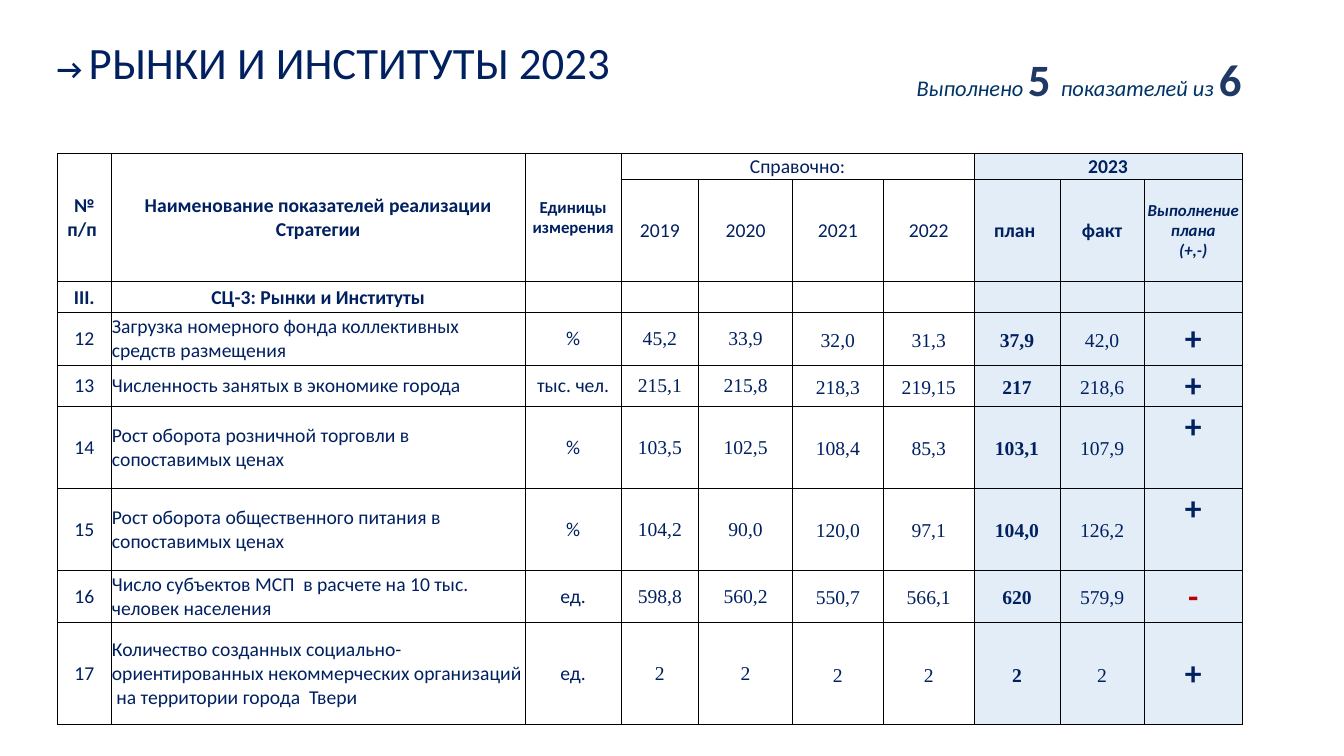
from lxml import etree
from pptx import Presentation
from pptx.dml.color import RGBColor
from pptx.enum.text import MSO_ANCHOR, PP_ALIGN
from pptx.oxml.ns import qn
from pptx.util import Cm, Pt

LEFT, CENTER, RIGHT = PP_ALIGN.LEFT, PP_ALIGN.CENTER, PP_ALIGN.RIGHT
TOP, MIDDLE = MSO_ANCHOR.TOP, MSO_ANCHOR.MIDDLE
NAVY, TEAL, INDIGO, RED = "002060", "003366", "203864", "C00000"
WHITE, PALE, BLACK = "FFFFFF", "DEEBF7", "000000"
SERIF = "Times New Roman"

COLUMNS = [1.35, 10.44, 2.41, 1.96, 2.36, 2.29, 2.29, 2.16, 2.13, 2.46]
ROWS = [0.66, 2.57, 0.77, 1.32, 1.04, 2.07, 2.06, 1.32, 2.57]
FIRST_SPACED, PLAN, FACT, RESULT = 5, 7, 8, 9
YEARS = ["2019", "2020", "2021", "2022"]
INDICATORS = [
    ["12", "Загрузка номерного фонда коллективных средств размещения", "%",
     "45,2", "33,9", "32,0", "31,3", "37,9", "42,0", "+"],
    ["13", "Численность занятых в экономике города", "тыс. чел.",
     "215,1", "215,8", "218,3", "219,15", "217", "218,6", "+"],
    ["14", "Рост оборота розничной торговли в сопоставимых ценах", "%",
     "103,5", "102,5", "108,4", "85,3", "103,1", "107,9", "+"],
    ["15", "Рост оборота общественного питания в сопоставимых ценах", "%",
     "104,2", "90,0", "120,0", "97,1", "104,0", "126,2", "+"],
    ["16", "Число субъектов МСП  в расчете на 10 тыс. человек населения", "ед.",
     "598,8", "560,2", "550,7", "566,1", "620", "579,9", "-"],
    ["17", "Количество созданных социально-ориентированных некоммерческих "
     "организаций  на территории города  Твери", "ед.",
     "2", "2", "2", "2", "2", "2", "+"],
]
TOP_MARKED = ("14", "15")


def rgb(color):
    return RGBColor.from_string(color)


def add_text(p, text, size=14, color=NAVY, bold=False, italic=False,
             font="Calibri", align=CENTER, spacing=None):
    p.alignment = align
    if spacing:
        p.line_spacing = spacing
    r = p.add_run()
    r.text = text
    r.font.name = font
    r.font.size = Pt(size)
    r.font.bold = bold
    r.font.italic = italic
    r.font.color.rgb = rgb(color)


def add_text_box(s, left, top, width, height, wrap):
    tf = s.shapes.add_textbox(Cm(left), Cm(top), Cm(width), Cm(height)).text_frame
    tf.word_wrap = wrap
    return tf.paragraphs[0]


def add_border(cell):
    tc_pr = cell._tc.get_or_add_tcPr()
    for side in ("a:lnL", "a:lnR", "a:lnT", "a:lnB"):
        ln = etree.SubElement(tc_pr, qn(side), w=str(Pt(0.5)))
        fill = etree.SubElement(ln, qn("a:solidFill"))
        etree.SubElement(fill, qn("a:srgbClr"), val=BLACK)


def fill_cell(cell, color, opacity=100):
    cell.fill.solid()
    cell.fill.fore_color.rgb = rgb(color)
    if opacity < 100:
        clr = cell._tc.tcPr.find(qn("a:solidFill")).find(qn("a:srgbClr"))
        etree.SubElement(clr, qn("a:alpha"), val=str(opacity * 1000))


def add_grid(s):
    shape = s.shapes.add_table(len(ROWS), len(COLUMNS), Cm(1.45), Cm(3.86),
                               Cm(sum(COLUMNS)), Cm(sum(ROWS)))
    table = shape.table
    table.first_row = False
    table.horz_banding = False
    for column, width in zip(table.columns, COLUMNS):
        column.width = Cm(width)
    for row, height in zip(table.rows, ROWS):
        row.height = Cm(height)
        for c, cell in enumerate(row.cells):
            cell.margin_left = cell.margin_right = cell.margin_top = Cm(0.02)
            cell.margin_bottom = 0
            cell.vertical_anchor = MIDDLE
            add_border(cell)
            if c >= PLAN:
                fill_cell(cell, PALE, 85)
            else:
                fill_cell(cell, WHITE)
    return table


def write_cell(table, row, col, text, **style):
    add_text(table.cell(row, col).text_frame.paragraphs[0], text, **style)


def write_header(table):
    spans = [(0, 0, 1, 0), (0, 1, 1, 1), (0, 2, 1, 2), (0, 3, 0, 6), (0, PLAN, 0, RESULT)]
    for r1, c1, r2, c2 in spans:
        table.cell(r1, c1).merge(table.cell(r2, c2))
    write_cell(table, 0, 0, "№ п/п ", bold=True)
    write_cell(table, 0, 1, "Наименование показателей реализации Стратегии", bold=True)
    write_cell(table, 0, 2, "Единицы измерения", size=12, bold=True)
    write_cell(table, 0, 3, "Справочно:")
    write_cell(table, 0, PLAN, "2023", bold=True)
    for c, year in enumerate(YEARS, 3):
        write_cell(table, 1, c, year)
    write_cell(table, 1, PLAN, "план ", bold=True)
    write_cell(table, 1, FACT, "факт", bold=True)
    result = dict(size=12, bold=True, italic=True)
    write_cell(table, 1, RESULT, "Выполнение плана", **result)
    add_text(table.cell(1, RESULT).text_frame.add_paragraph(), "(+,-)", **result)
    section = ["III.", "СЦ-3: Рынки и Институты"] + [""] * 8
    for c, text in enumerate(section):
        write_cell(table, 2, c, text, bold=True)


def indicator_style(col, text):
    if col == RESULT:
        return dict(size=24, bold=True, color=RED if text == "-" else NAVY)
    if col < 3:
        return dict(align=LEFT if col == 1 else CENTER)
    return dict(font=SERIF, bold=col == PLAN,
                spacing=1.15 if col >= FIRST_SPACED else None)


def write_indicators(table):
    for r, values in enumerate(INDICATORS, 3):
        for c, text in enumerate(values):
            write_cell(table, r, c, text, **indicator_style(c, text))
        if values[0] in TOP_MARKED:
            table.cell(r, RESULT).vertical_anchor = TOP


def add_title(s):
    p = add_text_box(s, 1.12, 0.76, 14.58, 1.62, False)
    add_text(p, "→ ", size=20, bold=True)
    add_text(p, "РЫНКИ И ИНСТИТУТЫ 2023", size=32)


def add_summary(s):
    p = add_text_box(s, 22.73, 1.19, 8.81, 1.62, True)
    label = dict(size=16, color=TEAL, italic=True, align=RIGHT)
    count = dict(size=32, color=INDIGO, bold=True, align=RIGHT)
    add_text(p, "Выполнено", **label)
    add_text(p, " ", **{**label, "size": 14})
    add_text(p, "5 ", **count)
    add_text(p, "показателей из ", **label)
    add_text(p, "6", **count)


def main():
    prs = Presentation()
    prs.slide_width, prs.slide_height = Cm(33.87), Cm(19.05)
    s = prs.slides.add_slide(prs.slide_layouts[6])
    add_title(s)
    table = add_grid(s)
    write_header(table)
    write_indicators(table)
    add_summary(s)
    prs.save("out.pptx")


if __name__ == "__main__":
    main()
